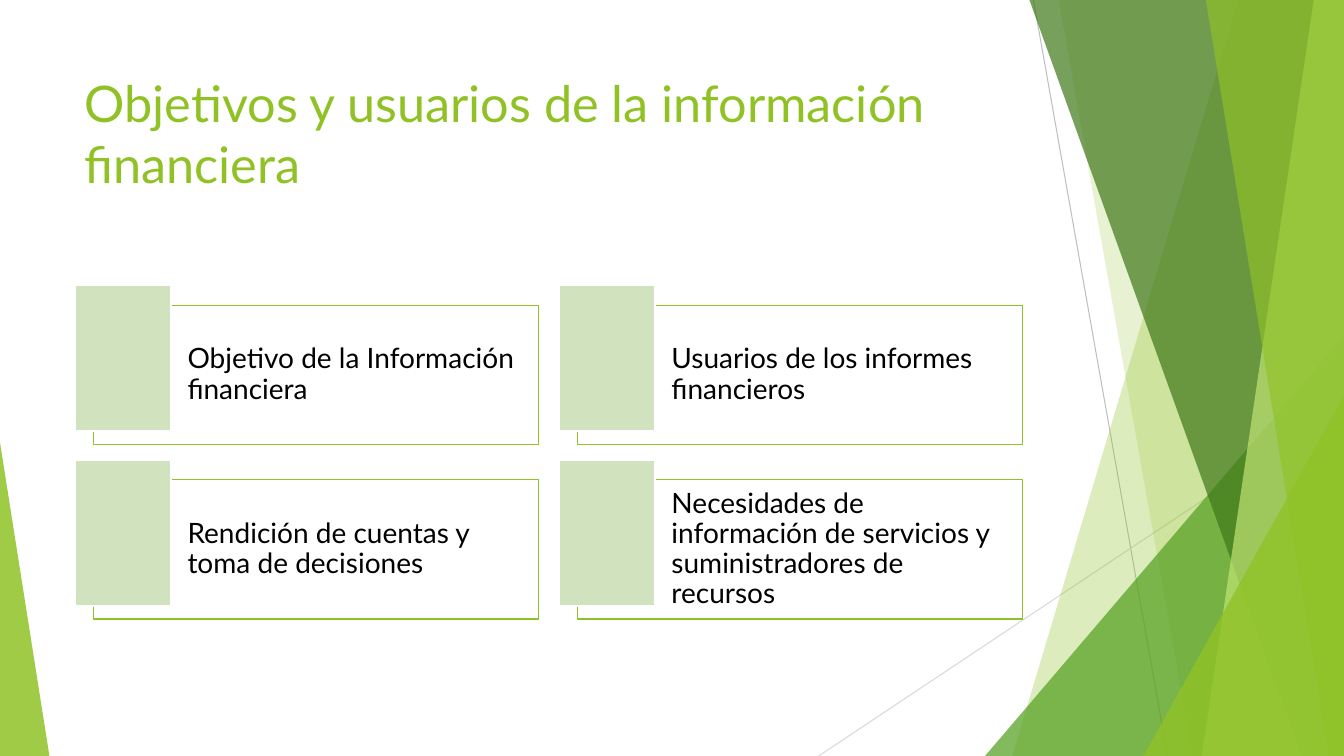
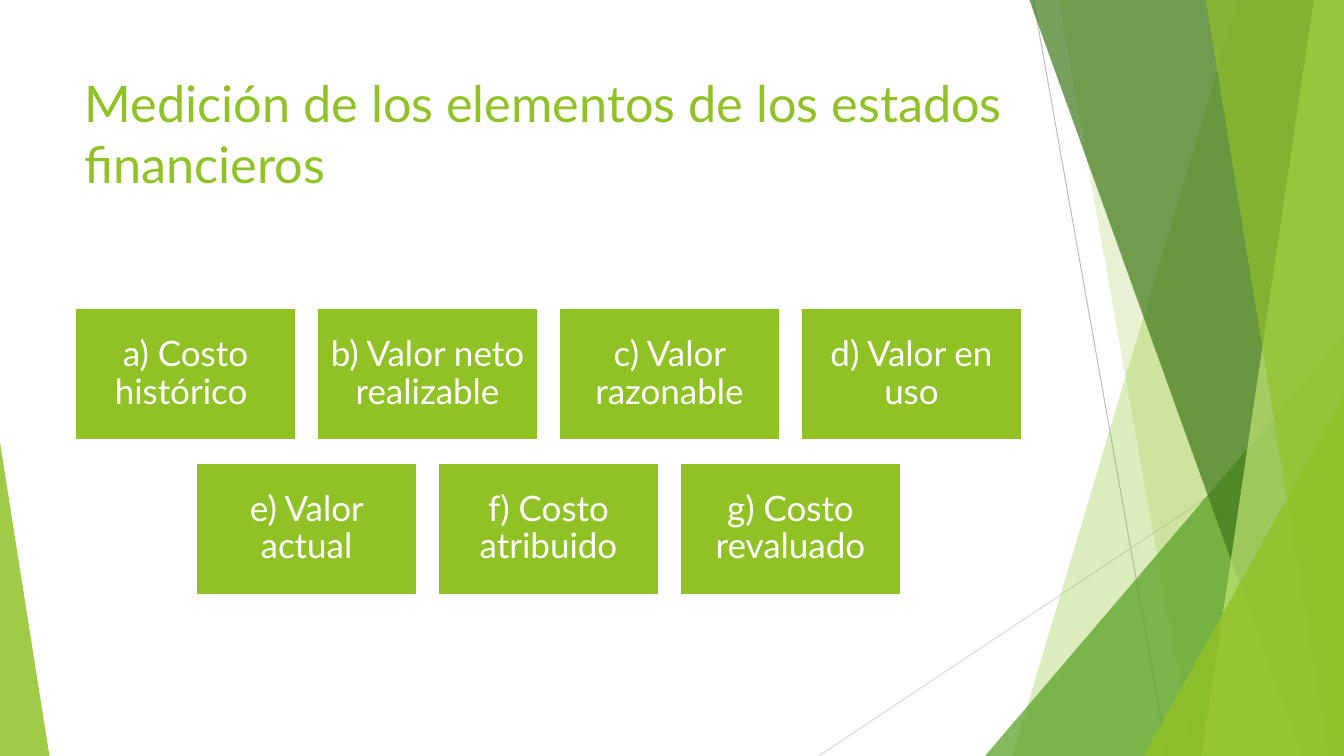
from lxml.etree import SubElement
from pptx import Presentation
from pptx.dml.color import RGBColor
from pptx.enum.shapes import MSO_CONNECTOR, MSO_SHAPE
from pptx.enum.text import MSO_ANCHOR, MSO_AUTO_SIZE, PP_ALIGN
from pptx.oxml.ns import qn
from pptx.util import Inches, Pt

WIDTH, HEIGHT = 13.33, 7.5
GREEN, MID_GREEN, DARK_GREEN = "90C226", "54A021", "3F7819"
LIME, PALE_GREEN = "C0E474", "D1E3BE"
WHITE, BLACK = "FFFFFF", "000000"

RAYS = [
    ((10.25, 0), (11.58, HEIGHT), "BFBFBF"),
    ((WIDTH, 4.03), (8.12, HEIGHT), "D9D9D9"),
]
BACK_BANDS = [(12.28, 10.04, GREEN, 30), (10.5, 11.83, GREEN, 20)]
FRONT_BANDS = [
    (10.21, 12.91, DARK_GREEN, 70),
    (13.03, 11.92, LIME, 70),
    (11.96, 13.18, GREEN, 65),
]

OBJECTIVES = [
    "Objetivo de la Información financiera",
    "Usuarios de los informes financieros",
    "Rendición de cuentas y toma de decisiones",
    "Necesidades de información de servicios y suministradores de recursos",
]
MEASUREMENTS = [
    ["a) Costo histórico ", "b) Valor neto realizable", "c) Valor razonable", "d) Valor en uso"],
    ["e) Valor actual", "f) Costo atribuido", "g) Costo revaluado"],
]


def color(value):
    """Turn a hex string into a colour."""
    return RGBColor.from_string(value)


class Deck:
    """Holds the shared style and the current slide."""

    font = "Lato"

    def __init__(self):
        """Start an empty widescreen presentation."""
        self.presentation = Presentation()
        self.presentation.slide_width = Inches(WIDTH)
        self.presentation.slide_height = Inches(HEIGHT)
        self.slide = None

    def add_slide(self, heading):
        """Add a slide with the backdrop and a title on top of it."""
        self.slide = self.presentation.slides.add_slide(self.presentation.slide_layouts[5])
        self.backdrop()
        title = self.slide.shapes.title
        self.slide.shapes._spTree.append(title._element)
        title.left, title.top = Inches(0.74), Inches(0.67)
        title.width, title.height = Inches(9.4), Inches(1.44)
        self.label(title, heading, 36, GREEN, MSO_ANCHOR.TOP)

    def backdrop(self):
        """Draw the rays, slanted bands and corner triangles."""
        for start, end, tone in RAYS:
            self.ray(start, end, tone)
        for band in BACK_BANDS:
            self.band(*band)
        self.corner(9.77, 3.33, 3.56, 1, MID_GREEN, 72)
        for band in FRONT_BANDS:
            self.band(*band)
        self.corner(11.34, 3.93, 1.99, 1, GREEN, 80)
        self.corner(0, 4.39, 0.49, 0, GREEN, 85)

    def ray(self, start, end, tone):
        """Draw a thin line without shadow."""
        ray = self.slide.shapes.add_connector(
            MSO_CONNECTOR.STRAIGHT, *(Inches(value) for value in start + end))
        ray.line.color.rgb = color(tone)
        ray.line.width = Pt(0.75)
        SubElement(ray._element.spPr, qn("a:effectLst"))

    def band(self, top_x, bottom_x, tone, opacity):
        """Draw a full-height band from a slanted edge to the right side."""
        outline = self.slide.shapes.build_freeform(Inches(top_x), 0)
        corners = [(WIDTH, 0), (WIDTH, HEIGHT), (bottom_x, HEIGHT)]
        outline.add_line_segments([(Inches(x), Inches(y)) for x, y in corners])
        self.paint(outline.convert_to_shape(), tone, opacity)

    def corner(self, left, top, width, apex, tone, opacity):
        """Draw a triangle standing on the bottom edge."""
        triangle = self.slide.shapes.add_shape(
            MSO_SHAPE.ISOSCELES_TRIANGLE,
            Inches(left), Inches(top), Inches(width), Inches(HEIGHT - top))
        triangle.adjustments[0] = apex
        self.paint(triangle, tone, opacity)

    def box(self, left, top, width, height, tone, edge, edge_width, opacity=100):
        """Draw an outlined rectangle."""
        box = self.slide.shapes.add_shape(
            MSO_SHAPE.RECTANGLE, Inches(left), Inches(top), Inches(width), Inches(height))
        self.paint(box, tone, opacity)
        box.line.color.rgb = color(edge)
        box.line.width = Pt(edge_width)
        return box

    def paint(self, shape, tone, opacity):
        """Fill a shape and remove its outline and shadow."""
        shape.shadow.inherit = False
        shape.fill.solid()
        shape.fill.fore_color.rgb = color(tone)
        shape.line.fill.background()
        if opacity < 100:
            solid = shape._element.spPr.find(qn("a:solidFill"))
            SubElement(solid[0], qn("a:alpha"), val=str(opacity * 1000))

    def label(self, shape, words, size, tone, anchor=MSO_ANCHOR.MIDDLE,
              align=PP_ALIGN.LEFT, spacing=1.0):
        """Set the text of a shape and format it."""
        frame = shape.text_frame
        frame.text = words
        frame.word_wrap = True
        frame.auto_size = MSO_AUTO_SIZE.NONE
        frame.vertical_anchor = anchor
        paragraph = frame.paragraphs[0]
        paragraph.alignment = align
        paragraph.line_spacing = spacing
        font = paragraph.runs[0].font
        font.name, font.size = self.font, Pt(size)
        font.color.rgb = color(tone)

    def inset(self, shape, left, others):
        """Set the inner margins of a shape."""
        frame = shape.text_frame
        frame.margin_left = Inches(left)
        frame.margin_top = frame.margin_right = frame.margin_bottom = Inches(others)

    def card(self, left, top, words):
        """Draw a framed text with a pale block over its left end."""
        card = self.box(left, top, 4.41, 1.38, WHITE, GREEN, 1, 40)
        self.inset(card, 0.93, 0.08)
        self.label(card, words, 20, BLACK, spacing=0.9)
        self.box(left - 0.19, top - 0.2, 0.96, 1.45, PALE_GREEN, WHITE, 1.5)

    def tile_row(self, top, names):
        """Draw a centred row of green tiles."""
        width, gap, center = 2.19, 0.21, 5.44
        pitch = width + gap
        first = center - (len(names) * pitch - gap) / 2
        for column, name in enumerate(names):
            tile = self.box(first + column * pitch, top, width, 1.31, GREEN, WHITE, 1.5)
            self.inset(tile, 0.1, 0.1)
            self.label(tile, name, 25, WHITE, align=PP_ALIGN.CENTER, spacing=0.9)


def main():
    """Build both slides and save them."""
    deck = Deck()
    deck.add_slide("Objetivos y usuarios de la información financiera")
    for index, objective in enumerate(OBJECTIVES):
        row, column = divmod(index, 2)
        deck.card(0.93 + column * 4.8, 3.03 + row * 1.73, objective)

    deck.add_slide("Medición de los elementos de los estados financieros")
    for row, names in enumerate(MEASUREMENTS):
        deck.tile_row(3.06 + row * 1.53, names)

    deck.presentation.save("out.pptx")


if __name__ == "__main__":
    main()
